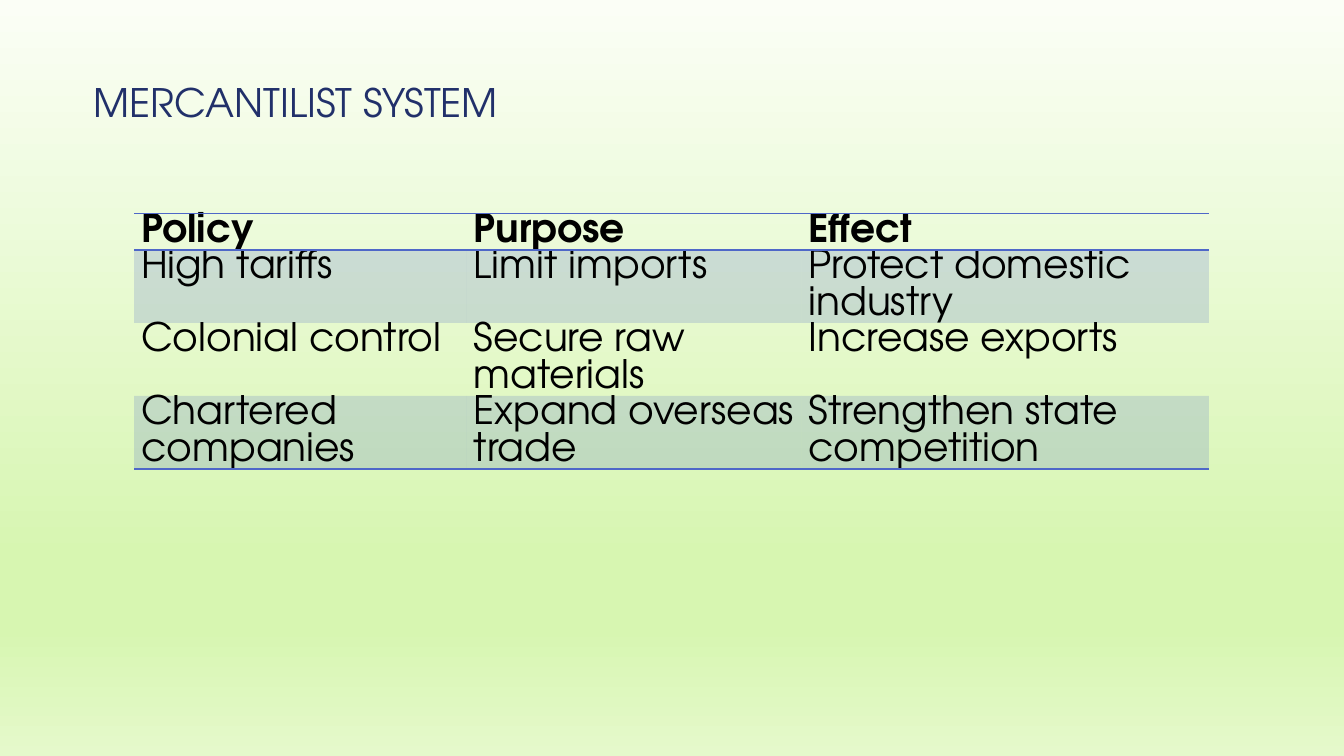
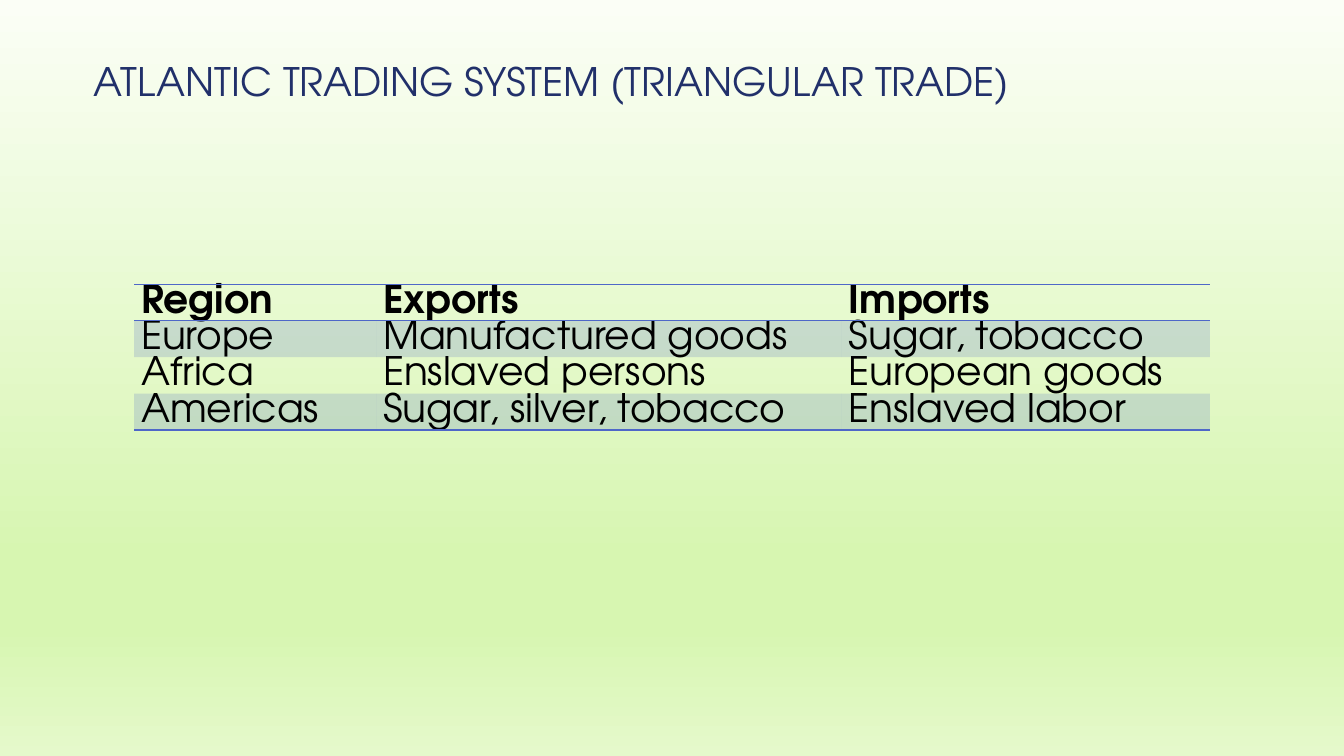
"""Build two slides comparing early modern trade systems in tables."""
from lxml import etree
from pptx import Presentation
from pptx.dml.color import RGBColor
from pptx.enum.text import MSO_ANCHOR, MSO_AUTO_SIZE, PP_ALIGN
from pptx.oxml.ns import qn
from pptx.util import Inches, Pt

BOTTOM = MSO_ANCHOR.BOTTOM
NO_AUTOFIT = MSO_AUTO_SIZE.NONE
LEFT = PP_ALIGN.LEFT

NAVY = RGBColor(0x21, 0x30, 0x6A)
BLUE = RGBColor(0x4E, 0x67, 0xC8)
BLACK = RGBColor(0, 0, 0)
BACKGROUND_STOPS = [
    (0, RGBColor(0xFB, 0xFE, 0xF6)),
    (74, RGBColor(0xD7, 0xF6, 0xB1)),
    (83, RGBColor(0xD7, 0xF6, 0xB1)),
    (100, RGBColor(0xE5, 0xF9, 0xCB)),
]
BAND_OPACITY = 20
PLAIN_TABLE_STYLE = "{2D5ABB26-0587-4C30-8999-92F81FD0307C}"
TITLE_ONLY = 5

FONT = {"name": "TeX Gyre Adventor", "size": Pt(28)}
TITLE_FONT = {**FONT, "bold": False}
TITLE_FRAME = {"vertical_anchor": BOTTOM, "auto_size": NO_AUTOFIT, "word_wrap": True}
CELL_MARGINS = {
    "margin_left": Inches(0.07),
    "margin_right": Inches(0.07),
    "margin_top": 0,
    "margin_bottom": 0,
}
TITLE_LEFT, TITLE_TOP, TITLE_WIDTH = 0.83, 0.42, 11.67
TABLE_LEFT, ROW_HEIGHT = 1.33, 0.36

SLIDES = [
    {
        "title": "MERCANTILIST SYSTEM",
        "title_height": 0.88,
        "table_top": 2.12,
        "column_widths": [3.3, 3.32, 4.04],
        "rows": [
            ("Policy", "Purpose", "Effect"),
            ("High tariffs", "Limit imports", "Protect domestic industry"),
            ("Colonial control", "Secure raw materials", "Increase exports"),
            ("Chartered companies", "Expand overseas trade",
             "Strengthen state competition"),
        ],
    },
    {
        "title": "ATLANTIC TRADING SYSTEM (TRIANGULAR TRADE)",
        "title_height": 0.67,
        "table_top": 2.82,
        "column_widths": [2.4, 4.62, 3.65],
        "rows": [
            ("Region", "Exports", "Imports"),
            ("Europe", "Manufactured goods", "Sugar, tobacco"),
            ("Africa", "Enslaved persons", "European goods"),
            ("Americas", "Sugar, silver, tobacco", "Enslaved labor"),
        ],
    },
]


def set_attributes(target, values):
    for name, value in values.items():
        setattr(target, name, value)


def format_font(font, values, color):
    set_attributes(font, values)
    font.color.rgb = color


def add_child(parent, tag, **attributes):
    return etree.SubElement(parent, qn(tag), attributes)


def set_background(master):
    fill = master.background.fill
    fill.gradient()
    fill.gradient_angle = 270
    stops = next(master.element.iter(qn("a:gsLst")))
    for stop in list(stops):
        stops.remove(stop)
    for percent, color in BACKGROUND_STOPS:
        stop = add_child(stops, "a:gs", pos=str(percent * 1000))
        add_child(stop, "a:srgbClr", val=str(color))


def add_title(slide, content):
    title = slide.shapes.title
    title.left, title.top = Inches(TITLE_LEFT), Inches(TITLE_TOP)
    title.width, title.height = Inches(TITLE_WIDTH), Inches(content["title_height"])
    set_attributes(title.text_frame, TITLE_FRAME)
    title.text_frame.text = content["title"]
    paragraph = title.text_frame.paragraphs[0]
    set_attributes(paragraph, {"alignment": LEFT, "line_spacing": 0.9})
    format_font(paragraph.font, TITLE_FONT, NAVY)


def add_border(cell, side):
    properties = cell._tc.get_or_add_tcPr()
    line = add_child(properties, side, w=str(Pt(1)))
    add_child(add_child(line, "a:solidFill"), "a:srgbClr", val=str(BLUE))


def fill_cell(cell, banded):
    if not banded:
        cell.fill.background()
        return
    cell.fill.solid()
    cell.fill.fore_color.rgb = BLUE
    color = next(cell._tc.iter(qn("a:tcPr"))).find(qn("a:solidFill"))[0]
    add_child(color, "a:alpha", val=str(BAND_OPACITY * 1000))


def add_trade_table(slide, content):
    rows, widths = content["rows"], content["column_widths"]
    frame = slide.shapes.add_table(
        len(rows), len(widths), Inches(TABLE_LEFT), Inches(content["table_top"]),
        Inches(sum(widths)), Inches(ROW_HEIGHT * len(rows)))
    next(frame.element.iter(qn("a:tableStyleId"))).text = PLAIN_TABLE_STYLE
    table = frame.table
    for column, width in zip(table.columns, widths):
        column.width = Inches(width)
    for row_index, row in enumerate(rows):
        header = row_index == 0
        for column_index, text in enumerate(row):
            cell = table.cell(row_index, column_index)
            cell.text = text
            set_attributes(cell, CELL_MARGINS)
            format_font(cell.text_frame.paragraphs[0].font,
                        {**FONT, "bold": header}, BLACK)
            if header:
                add_border(cell, "a:lnT")
            if header or row_index == len(rows) - 1:
                add_border(cell, "a:lnB")
            fill_cell(cell, row_index % 2 == 1)


def main():
    presentation = Presentation()
    presentation.slide_width, presentation.slide_height = Inches(13.33), Inches(7.5)
    set_background(presentation.slide_master)
    for content in SLIDES:
        slide = presentation.slides.add_slide(presentation.slide_layouts[TITLE_ONLY])
        add_title(slide, content)
        add_trade_table(slide, content)
    presentation.save("out.pptx")


if __name__ == "__main__":
    main()
